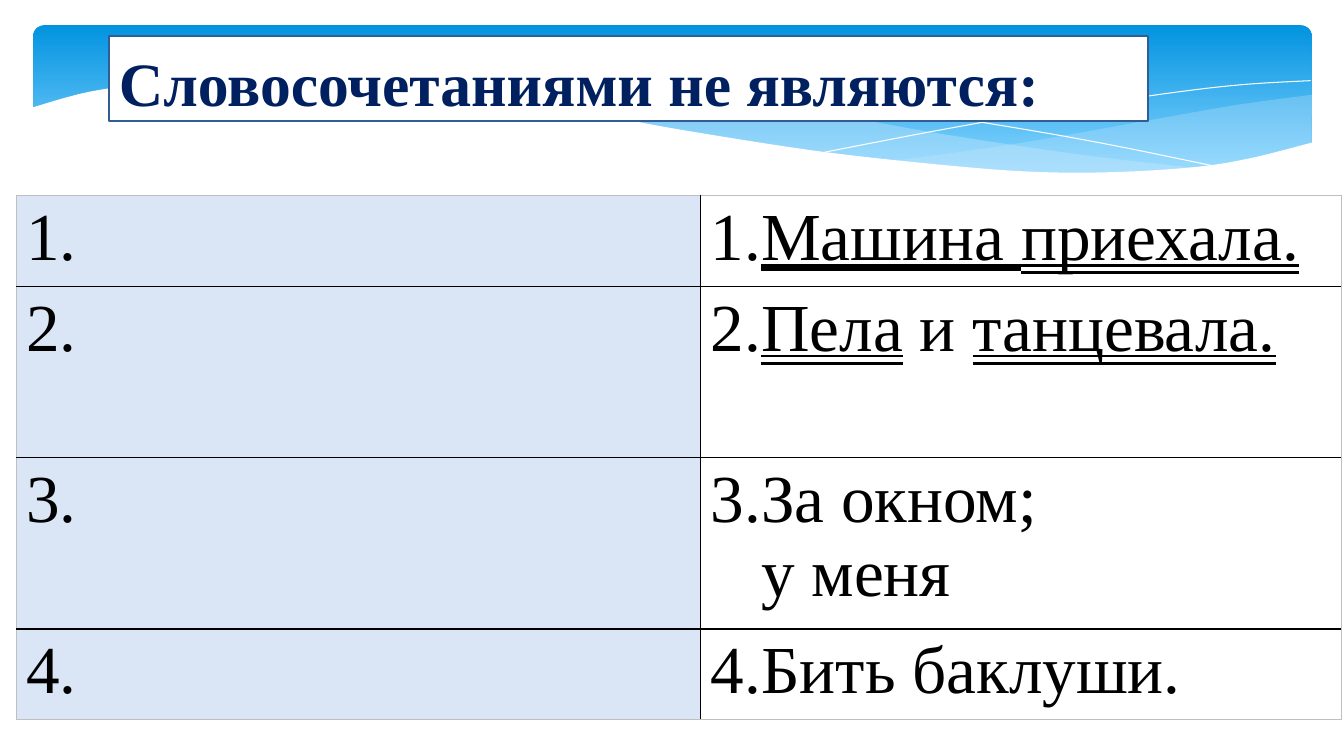
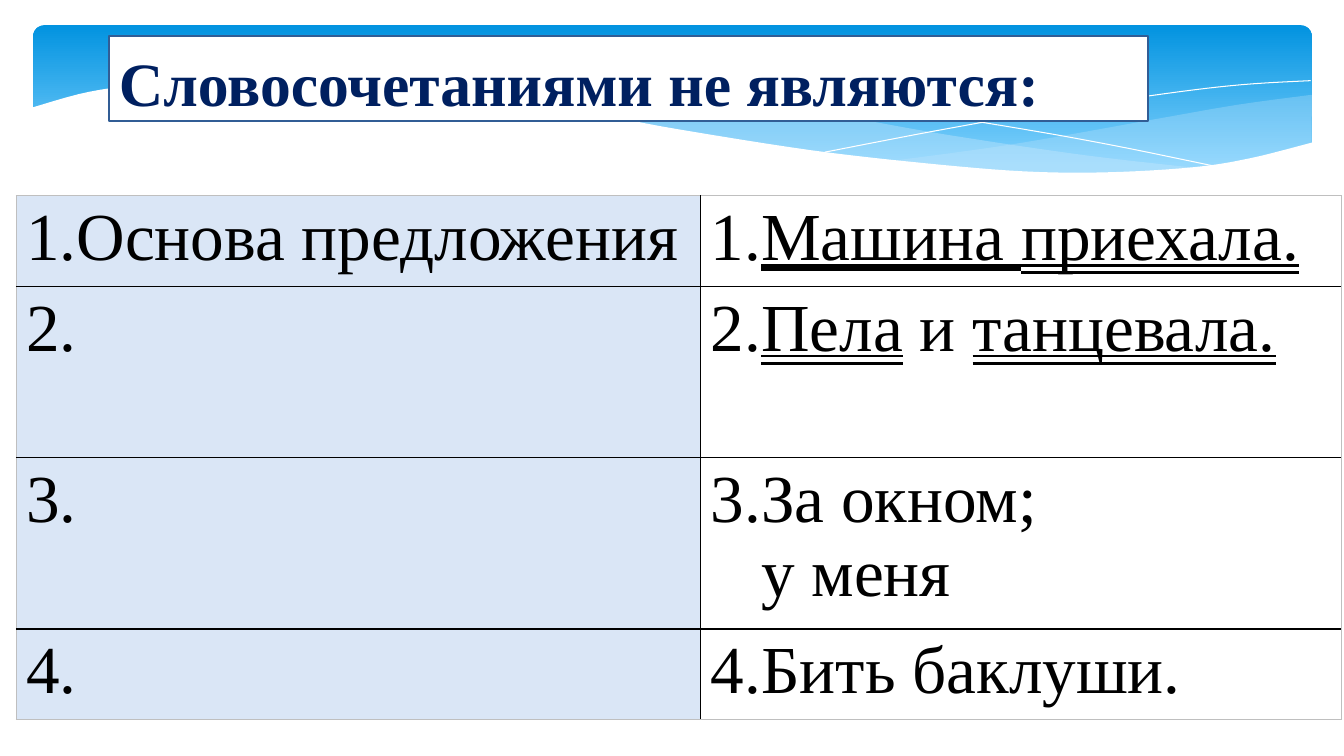
from lxml.etree import SubElement
from pptx import Presentation
from pptx.dml.color import RGBColor
from pptx.enum.shapes import MSO_SHAPE
from pptx.enum.text import MSO_ANCHOR as ANCHOR, MSO_UNDERLINE as UL, PP_ALIGN as ALIGN
from pptx.oxml.ns import qn
from pptx.util import Inches, Pt

FONT = "Times New Roman"
COLORS = {
    "white": "FFFFFF", "black": "000000", "navy": "002060", "frame": "315D95",
    "band_top": "0293E0", "band_bottom": "83D3FE", "wave": "C6E7FC",
    "label": "DAE6F6", "outer": "BFBFBF",
}

# Knots of the header curves, in inches from the band's top left corner
WEDGE_TOP = [(12.68, .69), (11.94, .79), (11.14, .93), (9.72, 1.18), (8.49, 1.35)]
WEDGE_BOTTOM = [(8.49, 1.35), (9.43, 1.43), (10.38, 1.47), (11.3, 1.44), (11.95, 1.35),
                (12.68, 1.17)]
SWOOSH_TOP = [(11.57, 1.42), (10.43, 1.29), (9.08, 1.09), (8.06, .91), (7.07, .75),
              (6.19, .64), (5.27, .57), (4.49, .55), (3.49, .61)]
SWOOSH_BOTTOM = [(3.49, .61), (4.5, .72), (5.66, .91), (7.22, 1.18), (8.54, 1.36),
                 (9.65, 1.45), (10.57, 1.48), (11.57, 1.42)]
FALLING_LINE = [(3.79, .65), (4.25, .59), (5.02, .57), (5.92, .58), (7.09, .66),
                (8.53, .83), (9.81, 1.03), (10.75, 1.2), (11.77, 1.41)]
RISING_LINE = [(7.85, 1.26), (8.94, 1.05), (10.02, .86), (11.22, .68), (11.99, .59),
               (12.67, .55)]
PAGE_EDGE = [(12.7, 1.16), (12.07, 1.32), (11.5, 1.41), (10.64, 1.46), (9.82, 1.45),
             (8.85, 1.37), (7.71, 1.24), (6.38, 1.03), (5.63, .89), (4.53, .71),
             (3.57, .6), (2.73, .54), (2.02, .53), (1.25, .57), (.56, .66), (-.02, .82)]
PAGE_CORNERS = [(-.02, 1.99), (12.7, 1.99)]

# Table text: a cell is a list of paragraphs, a paragraph is (indent, runs)
TITLE = "Словосочетаниями не являются:"
EXAMPLES = [
    [(0, [("1.", None), ("Машина ", UL.HEAVY_LINE), ("приехала.", UL.DOUBLE_LINE)])],
    [(0, [("2.", None), ("Пела", UL.DOUBLE_LINE), (" и ", None),
          ("танцевала.", UL.DOUBLE_LINE)])],
    [(0, [("3.За окном;", None)]), (0.5, [("у меня", None)])],
    [(0, [("4.Бить баклуши.", None)])],
]
SLIDE_LABELS = [
    ["1.", "2.", "3.", "4."],
    ["1.Основа предложения", "2.", "3.", "4."],
]
COL_WIDTHS = [6.79, 6.35]
ROW_HEIGHTS = [0.9, 1.7, 1.7, 0.9]


def rgb(name):
    return RGBColor.from_string(COLORS[name])


def paint(sp, fill=None, line=None, width=0, opacity=None):
    sp.shadow.inherit = False
    if fill:
        sp.fill.solid()
        sp.fill.fore_color.rgb = rgb(fill)
    else:
        sp.fill.background()
    if line:
        sp.line.color.rgb = rgb(line)
        sp.line.width = Pt(width)
    else:
        sp.line.fill.background()
    if opacity is not None:
        clr = sp.fill._xPr.find(qn("a:solidFill"))[0]
        SubElement(clr, qn("a:alpha"), val=str(opacity * 1000))


def add_run(p, text, size, color, bold=False, underline=None):
    r = p.add_run()
    r.text = text
    f = r.font
    f.name, f.size, f.bold = FONT, Pt(size), bold
    f.color.rgb = rgb(color)
    if underline:
        f.underline = underline


def curve(knots, steps=6):
    """Points of a Catmull-Rom spline through the knots."""
    ends = [knots[0], *knots, knots[-1]]
    points = [knots[0]]
    for a, b, c, d in zip(ends, ends[1:], ends[2:], ends[3:]):
        for i in range(1, steps + 1):
            t = i / steps
            points.append(tuple(
                (2 * q + (s - o) * t + (2 * o - 5 * q + 4 * s - u) * t ** 2
                 + (3 * q - o - 3 * s + u) * t ** 3) / 2
                for o, q, s, u in zip(a, b, c, d)))
    return points


def outline(slide, x, y, points, close=True):
    pts = [(Inches(x + dx), Inches(y + dy)) for dx, dy in points]
    builder = slide.shapes.build_freeform(*pts[0])
    builder.add_line_segments(pts[1:], close=close)
    return builder.convert_to_shape()


def header_band(slide, x, y, w, h):
    # Gradient plate
    sp = slide.shapes.add_shape(MSO_SHAPE.ROUNDED_RECTANGLE,
                                Inches(x), Inches(y), Inches(w), Inches(h))
    sp.adjustments[0] = 0.07
    paint(sp)
    sp.fill.gradient()
    sp.fill.gradient_angle = 270
    for stop, color, pos in zip(sp.fill.gradient_stops, ("band_top", "band_bottom"), (0, 0.9)):
        stop.color.rgb = rgb(color)
        stop.position = pos

    # Translucent waves
    for top, bottom, opacity in ((WEDGE_TOP, WEDGE_BOTTOM, 29),
                                 (SWOOSH_TOP, SWOOSH_BOTTOM, 40)):
        paint(outline(slide, x, y, curve(top) + curve(bottom)), "wave", opacity=opacity)

    # Hairlines
    for knots in (FALLING_LINE, RISING_LINE):
        paint(outline(slide, x, y, curve(knots), close=False), line="white")

    # White page edge cutting the plate
    paint(outline(slide, x, y, curve(PAGE_EDGE) + PAGE_CORNERS), "white")


def title_box(slide, x, y, w, h):
    sp = slide.shapes.add_shape(MSO_SHAPE.RECTANGLE,
                                Inches(x), Inches(y), Inches(w), Inches(h))
    paint(sp, "white", "frame", 1.25)
    tf = sp.text_frame
    tf.word_wrap = True
    tf.vertical_anchor = ANCHOR.BOTTOM
    tf.margin_bottom = Inches(0.02)
    p = tf.paragraphs[0]
    p.alignment = ALIGN.LEFT
    add_run(p, TITLE, 44, "navy", bold=True)


def set_borders(cell, sides):
    """Sides are (tag, colour, points); lines go before the cell's fill."""
    tcPr = cell._tc.get_or_add_tcPr()
    for i, (tag, color, width) in enumerate(sides):
        ln = SubElement(tcPr, qn(f"a:{tag}"), w=str(Pt(width)))
        fill = SubElement(ln, qn("a:solidFill"))
        SubElement(fill, qn("a:srgbClr"), val=COLORS[color])
        tcPr.insert(i, ln)


def fill_cell(cell, paragraphs, fill):
    cell.fill.solid()
    cell.fill.fore_color.rgb = rgb(fill)
    tf = cell.text_frame
    for i, (indent, runs) in enumerate(paragraphs):
        p = tf.paragraphs[0] if i == 0 else tf.add_paragraph()
        if indent:
            p._p.get_or_add_pPr().set("marL", str(Inches(indent)))
        for text, underline in runs:
            add_run(p, text, 48, "black", underline=underline)


def phrase_table(slide, x, y, labels):
    rows, cols = len(ROW_HEIGHTS), len(COL_WIDTHS)
    table = slide.shapes.add_table(rows, cols, Inches(x), Inches(y), Inches(sum(COL_WIDTHS)),
                                   Inches(sum(ROW_HEIGHTS))).table
    table.first_row = table.horz_banding = False
    for col, width in zip(table.columns, COL_WIDTHS):
        col.width = Inches(width)
    for row, height in zip(table.rows, ROW_HEIGHTS):
        row.height = Inches(height)

    for i, (label, example) in enumerate(zip(labels, EXAMPLES)):
        contents = ([(0, [(label, None)])], "label"), (example, "white")
        for j, (paragraphs, fill) in enumerate(contents):
            cell = table.cell(i, j)
            fill_cell(cell, paragraphs, fill)
            on_edge = {"lnL": j == 0, "lnR": j == cols - 1,
                       "lnT": i == 0, "lnB": i == rows - 1}
            set_borders(cell, [(tag, "outer", 0.5) if edge else (tag, "black", 1)
                               for tag, edge in on_edge.items()])


def build_slide(prs, labels):
    slide = prs.slides.add_slide(prs.slide_layouts[6])
    header_band(slide, 0.33, 0.25, 12.68, 1.56)
    title_box(slide, 1.08, 0.36, 10.31, 0.84)
    phrase_table(slide, 0.16, 1.94, labels)


def main():
    prs = Presentation()
    prs.slide_width, prs.slide_height = Inches(13.33), Inches(7.5)
    for labels in SLIDE_LABELS:
        build_slide(prs, labels)
    prs.save("out.pptx")


if __name__ == "__main__":
    main()
